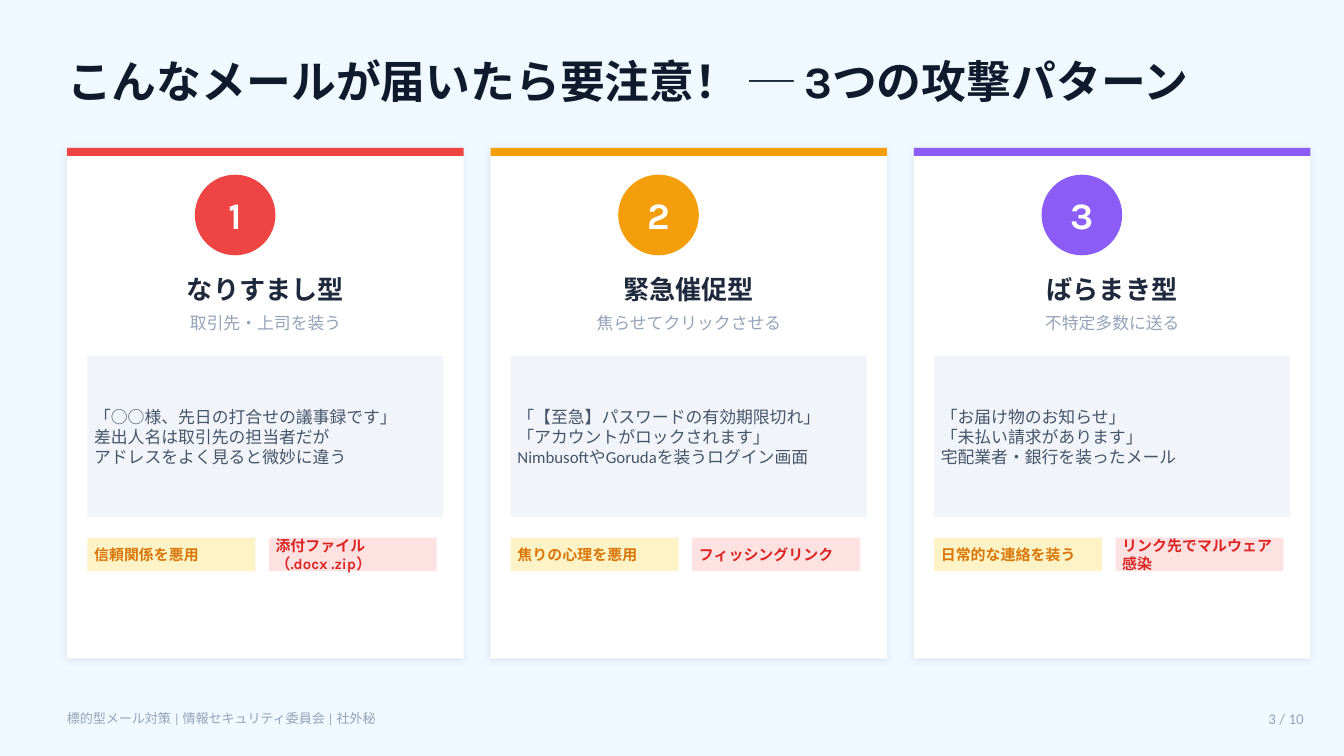
from dataclasses import dataclass

from lxml import etree
from pptx import Presentation
from pptx import util as u
from pptx.dml.color import RGBColor
from pptx.enum import shapes, text
from pptx.oxml.ns import qn

CELL = u.Inches(0.05)  # the slide is a grid of 200 columns
COLS = 200
LEFT, MID, RIGHT = text.PP_ALIGN.LEFT, text.PP_ALIGN.CENTER, text.PP_ALIGN.RIGHT
RECT, OVAL = shapes.MSO_SHAPE.RECTANGLE, shapes.MSO_SHAPE.OVAL


@dataclass(frozen=True)
class Style:
    font: str
    size: int
    color: str
    bold: bool = False


class Theme:
    back, card, quote = "F0F9FF", "FFFFFF", "F1F5F9"
    tags = ("FEF3C7", "FEE2E2")
    title = Style("Karla", 24, "0F1B2D", True)
    badge = Style("Karla", 20, "FFFFFF", True)
    head = Style("Karla", 14, "1E293B", True)
    sub = Style("Calibri", 9, "94A3B8")
    body = Style("Calibri", 9, "475569")
    tag = (Style("Karla", 8, "D97706", True), Style("Karla", 8, "DC2626", True))
    page = Style("Calibri", 8, "94A3B8")
    foot = Style("Calibri", 7, "94A3B8")


@dataclass(frozen=True)
class Box:
    """An area in grid cells."""
    x: float
    y: float
    w: float
    h: float

    def sub(self, x, y, w, h):
        return Box(self.x + x, self.y + y, w, h)

    def emu(self):
        return [round(v * CELL) for v in (self.x, self.y, self.w, self.h)]


CARDS = [
    ("EF4444", "なりすまし型", "取引先・上司を装う",
     ["「○○様、先日の打合せの議事録です」", "差出人名は取引先の担当者だが",
      "アドレスをよく見ると微妙に違う"],
     ["信頼関係を悪用", "添付ファイル（.docx .zip）"]),
    ("F59E0B", "緊急催促型", "焦らせてクリックさせる",
     ["「【至急】パスワードの有効期限切れ」", "「アカウントがロックされます」",
      "NimbusoftやGorudaを装うログイン画面"],
     ["焦りの心理を悪用", "フィッシングリンク"]),
    ("8B5CF6", "ばらまき型", "不特定多数に送る",
     ["「お届け物のお知らせ」", "「未払い請求があります」",
      "宅配業者・銀行を装ったメール"],
     ["日常的な連絡を装う", "リンク先でマルウェア感染"]),
]


def write(shape, lines, style, align=LEFT, side=0, edge=0):
    """Fill a shape with lines; side and edge are margins in cells."""
    frame = shape.text_frame
    frame.word_wrap = True
    frame.auto_size = text.MSO_AUTO_SIZE.NONE
    frame.vertical_anchor = text.MSO_ANCHOR.MIDDLE
    frame.margin_left = frame.margin_right = round(side * CELL)
    frame.margin_top = frame.margin_bottom = round(edge * CELL)
    frame.text = "\n".join(lines)
    for para in frame.paragraphs:
        para.alignment = align
        font = para.font
        font.name, font.size, font.bold = style.font, u.Pt(style.size), style.bold
        font.color.rgb = RGBColor.from_string(style.color)


def label(slide, box, line, style, align=LEFT, side=0, edge=0):
    write(slide.shapes.add_textbox(*box.emu()), [line], style, align, side, edge)


def block(slide, box, fill, kind=RECT):
    shape = slide.shapes.add_shape(kind, *box.emu())
    shape.shadow.inherit = False
    shape.fill.solid()
    shape.fill.fore_color.rgb = RGBColor.from_string(fill)
    shape.line.fill.background()
    return shape


def shade(shape):
    """Add a soft outer shadow."""
    effects = shape._element.spPr.find(qn("a:effectLst"))
    outer = etree.SubElement(effects, qn("a:outerShdw"), blurRad=str(u.Pt(4)),
                             dist=str(u.Pt(1)), dir=str(135 * 60000),
                             algn="bl", rotWithShape="0")
    color = etree.SubElement(outer, qn("a:srgbClr"), val="000000")
    etree.SubElement(color, qn("a:alpha"), val="8000")


def card(slide, box, num, color, name, note, lines, tags):
    shade(block(slide, box, Theme.card))
    block(slide, box.sub(0, 0, box.w, 1.2), color)
    badge = block(slide, box.sub(19, 4, 12, 12), color, OVAL)
    write(badge, [str(num)], Theme.badge, MID)
    label(slide, box.sub(2, 18, box.w - 4, 6), name, Theme.head, MID)
    label(slide, box.sub(2, 24, box.w - 4, 4), note, Theme.sub, MID)
    quote = block(slide, box.sub(3, 31, box.w - 6, 24), Theme.quote)
    write(quote, lines, Theme.body, side=1, edge=1)
    for i, tag in enumerate(tags):
        chip = block(slide, box.sub(3 + 27 * i, 58, 25, 5), Theme.tags[i])
        write(chip, [tag], Theme.tag[i], side=1)


def header(slide, box, line):
    title = slide.shapes.title
    title.left, title.top, title.width, title.height = box.emu()
    write(title, [line], Theme.title)


def deck(slide, box, gap):
    wide = (box.w - gap * (len(CARDS) - 1)) / len(CARDS)
    for i, data in enumerate(CARDS):
        card(slide, box.sub(i * (wide + gap), 0, wide, box.h), i + 1, *data)


def footer(slide, box):
    label(slide, box.sub(box.w - 14, 0, 14, box.h), "3 / 10", Theme.page, RIGHT, 2, 1)
    label(slide, box.sub(0, 0, 110, box.h),
          " | ".join(["標的型メール対策", "情報セキュリティ委員会", "社外秘"]),
          Theme.foot, LEFT, 2, 1)


def main():
    prs = Presentation()
    prs.slide_width = COLS * CELL
    prs.slide_height = prs.slide_width * 9 // 16
    slide = prs.slides.add_slide(prs.slide_layouts[5])
    slide.background.fill.solid()
    slide.background.fill.fore_color.rgb = RGBColor.from_string(Theme.back)
    header(slide, Box(10, 6, 180, 12), "こんなメールが届いたら要注意！ ─ 3つの攻撃パターン")
    deck(slide, Box(10, 22, 185, 76), gap=4)
    footer(slide, Box(8, 104.4, 188, 5))
    prs.save("out.pptx")


if __name__ == "__main__":
    main()
